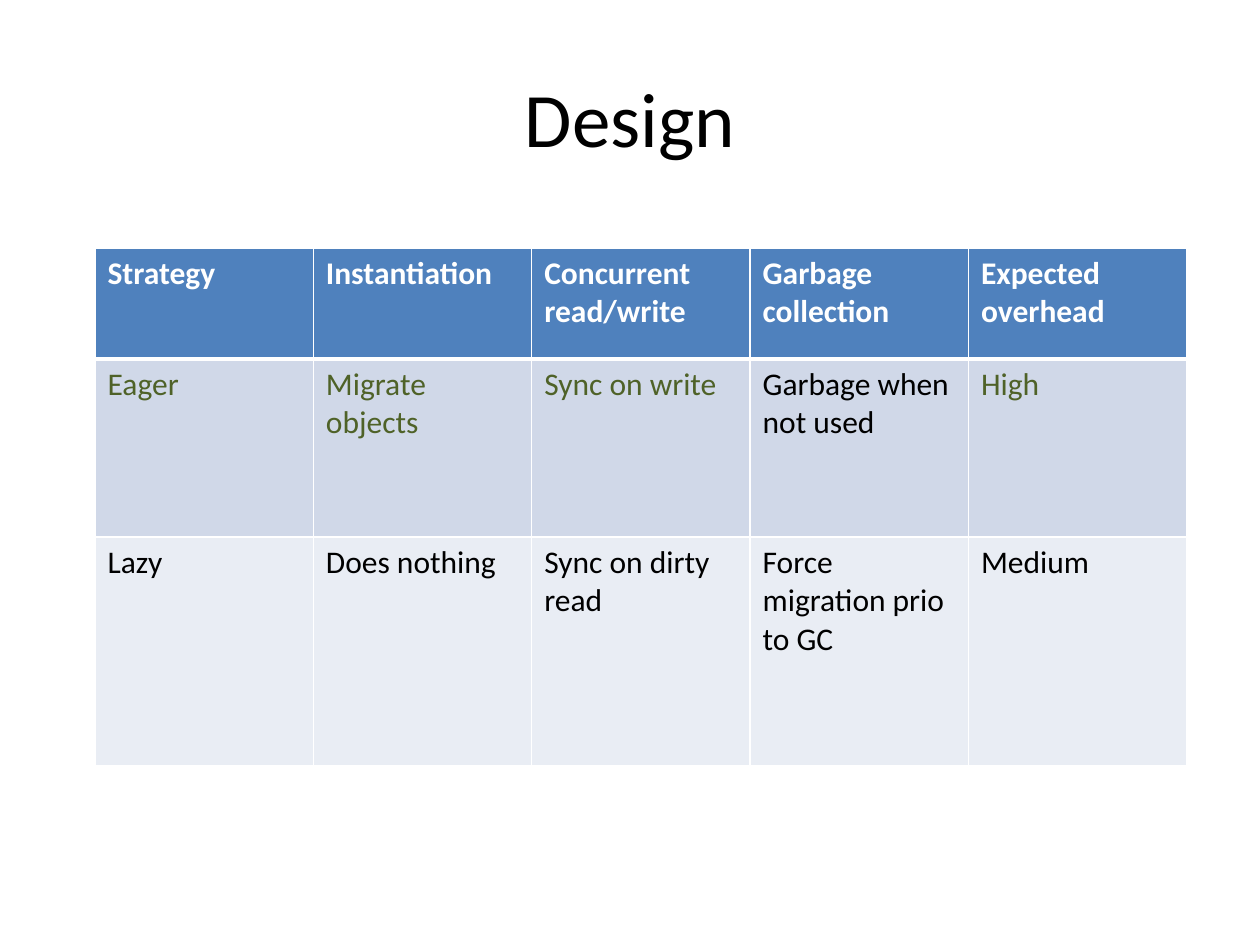
from lxml import etree
from pptx import Presentation
from pptx.dml.color import RGBColor
from pptx.enum.text import MSO_ANCHOR, PP_ALIGN
from pptx.oxml.ns import qn
from pptx.util import Emu, Pt

MIDDLE, TOP = MSO_ANCHOR.MIDDLE, MSO_ANCHOR.TOP
CENTER, LEFT = PP_ALIGN.CENTER, PP_ALIGN.LEFT
FONT = "Calibri"
WHITE = RGBColor(0xFF, 0xFF, 0xFF)
BLACK = RGBColor(0x00, 0x00, 0x00)
GREEN = RGBColor(0x4F, 0x62, 0x28)
BLUE = RGBColor(0x4F, 0x81, 0xBD)
MID = RGBColor(0xD0, 0xD8, 0xE8)
PALE = RGBColor(0xE9, 0xED, 0xF4)

HEADS = ["Strategy", "Instantiation", "Concurrent read/write",
         "Garbage collection", "Expected overhead"]
EAGER = ["Eager", "Migrate objects", "Sync on write",
         "Garbage when not used", "High"]
LAZY = ["Lazy", "Does nothing", "Sync on dirty read",
        "Force migration prio to GC", "Medium"]
# height, fill, text colours, texts
ROWS = [
    (111, BLUE, [WHITE] * 5, HEADS),
    (178, MID, [GREEN] * 3 + [BLACK, GREEN], EAGER),
    (229, PALE, [BLACK] * 5, LAZY),
]


def px(n):
    return Emu(round(n * 914400 / 126))


def edge(cell, sides):
    """Draw white cell borders; sides maps L, R, T, B to points."""
    props = cell._tc.get_or_add_tcPr()
    for i, (side, width) in enumerate(sides.items()):
        line = etree.Element(qn("a:ln" + side), w=str(Pt(width)))
        fill = etree.SubElement(line, qn("a:solidFill"))
        etree.SubElement(fill, qn("a:srgbClr"), val=str(WHITE))
        props.insert(i, line)


prs = Presentation()
prs.slide_width, prs.slide_height = px(1260), px(945)
slide = prs.slides.add_slide(prs.slide_layouts[5])

title = slide.shapes.title
title.left, title.top, title.width, title.height = px(63), px(38), px(1134), px(157)
title.text_frame.vertical_anchor = MIDDLE
para = title.text_frame.paragraphs[0]
para.alignment = CENTER
run = para.add_run()
run.text = "Design"
run.font.name, run.font.size = FONT, Pt(44)
run.font.color.rgb = BLACK

high = sum(row[0] for row in ROWS)
table = slide.shapes.add_table(
    len(ROWS), len(HEADS), px(95), px(248), px(1092), px(high)).table

for r, (tall, fill, inks, texts) in enumerate(ROWS):
    table.rows[r].height = px(tall)
    for c, (ink, text) in enumerate(zip(inks, texts)):
        cell = table.cell(r, c)
        cell.vertical_anchor = TOP
        cell.fill.solid()
        cell.fill.fore_color.rgb = fill
        edge(cell, {"L": 1, "R": 1, "T": 3 if r == 1 else 1, "B": 3 if r == 0 else 1})
        para = cell.text_frame.paragraphs[0]
        para.alignment = LEFT
        run = para.add_run()
        run.text = text
        run.font.name, run.font.size = FONT, Pt(18)
        run.font.bold = r == 0
        run.font.color.rgb = ink

prs.save("out.pptx")
